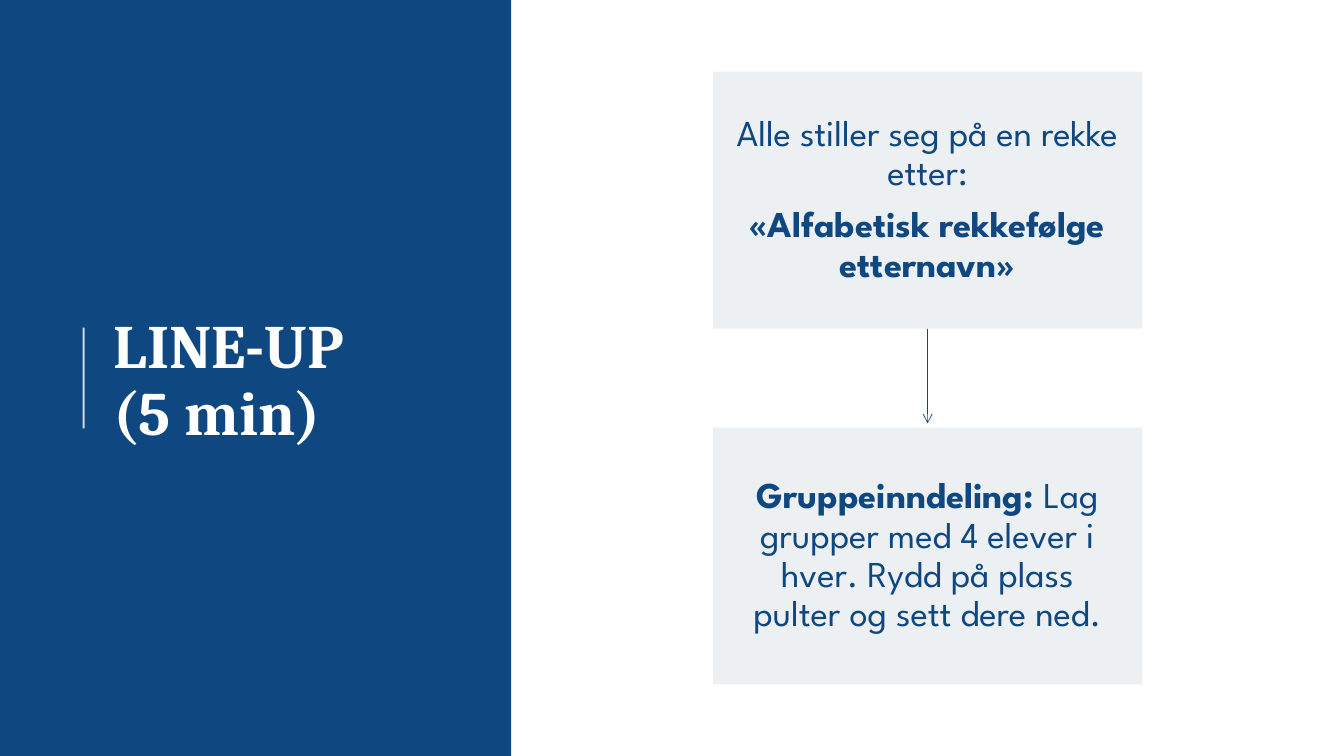
import dataclasses

import lxml.etree
import pptx
import pptx.dml.color
import pptx.enum.shapes
import pptx.enum.text
import pptx.oxml.ns
import pptx.util

Inches = pptx.util.Inches
Pt = pptx.util.Pt
qn = pptx.oxml.ns.qn


@dataclasses.dataclass(frozen=True)
class Theme:
    blue: str = "0F4881"
    white: str = "FFFFFF"
    card: str = "EDF0F3"
    title_font: str = "Cambria"
    body_font: str = "League Spartan"
    title_size: float = 44
    body_size: float = 26
    rule_width: float = 1.5
    arrow_width: float = 0.5
    line_spacing: float = 0.9
    space_after: float = 9


THEME = Theme()


def rgb(code):
    return pptx.dml.color.RGBColor.from_string(code)


def add_panel(page, left, top, width, height, color):
    panel = page.shapes.add_shape(
        pptx.enum.shapes.MSO_SHAPE.RECTANGLE,
        Inches(left), Inches(top), Inches(width), Inches(height))
    panel.shadow.inherit = False
    panel.fill.solid()
    panel.fill.fore_color.rgb = rgb(color)
    panel.line.fill.background()
    return panel


def add_line(page, start, end, color, width):
    line = page.shapes.add_connector(
        pptx.enum.shapes.MSO_CONNECTOR.STRAIGHT,
        *(Inches(value) for value in start + end))
    line.line.color.rgb = rgb(color)
    line.line.width = Pt(width)
    lxml.etree.SubElement(line._element.spPr, qn("a:effectLst"))
    return line


def set_frame(frame, side, edge):
    frame.word_wrap = True
    frame.vertical_anchor = pptx.enum.text.MSO_ANCHOR.MIDDLE
    frame.margin_left = frame.margin_right = Inches(side)
    frame.margin_top = frame.margin_bottom = Inches(edge)


def add_span(para, text, font, size, color, bold):
    span = para.add_run()
    span.text = text
    span.font.name = font
    span.font.size = Pt(size)
    span.font.color.rgb = rgb(color)
    span.font.bold = bold


def add_title_panel(page, left, top, width, height, lines):
    add_panel(page, left, top, width, height, THEME.blue)
    middle = top + height / 2
    rule_left = left + 0.83
    rule = add_line(page, (rule_left, middle + 0.5), (rule_left, middle - 0.5),
                    THEME.white, THEME.rule_width)
    color = rule._element.spPr.find(".//" + qn("a:srgbClr"))
    lxml.etree.SubElement(color, qn("a:alpha"), val="80000")

    box = page.shapes.add_textbox(
        Inches(left + 1.03), Inches(top + 0.78), Inches(3.69), Inches(6.02))
    set_frame(box.text_frame, 0.1, 0.05)
    para = box.text_frame.paragraphs[0]
    para.line_spacing = THEME.line_spacing
    for index, text in enumerate(lines):
        if index:
            para.add_line_break()
        add_span(para, text, THEME.title_font, THEME.title_size, THEME.white, True)


def add_card(page, left, top, width, height, paragraphs):
    card = add_panel(page, left, top, width, height, THEME.card)
    frame = card.text_frame
    set_frame(frame, 0.21, 0.22)
    for index, spans in enumerate(paragraphs):
        para = frame.add_paragraph() if index else frame.paragraphs[0]
        para.alignment = pptx.enum.text.PP_ALIGN.CENTER
        para.line_spacing = THEME.line_spacing
        para.space_after = Pt(THEME.space_after)
        for text, bold in spans:
            add_span(para, text, THEME.body_font, THEME.body_size, THEME.blue, bold)


def add_steps(page, left, top, width, height, steps):
    card_height = 2.55
    pitch = (height - card_height) / (len(steps) - 1)
    center = left + width / 2
    for index, paragraphs in enumerate(steps):
        card_top = top + index * pitch
        if index:
            arrow = add_line(page, (center, card_top - pitch + card_height),
                             (center, card_top - 0.04), THEME.blue, THEME.arrow_width)
            lxml.etree.SubElement(arrow.line._get_or_add_ln(), qn("a:tailEnd"), type="arrow")
        add_card(page, left, card_top, width, card_height, paragraphs)


def main():
    deck = pptx.Presentation()
    deck.slide_width = Inches(13.33)
    deck.slide_height = Inches(7.5)
    page = deck.slides.add_slide(deck.slide_layouts[6])
    add_title_panel(page, 0, 0, 5.07, 7.5, ["LINE-UP", "(5 min)"])
    steps = [
        [[("Alle stiller seg på en rekke etter:", False)],
         [("«Alfabetisk rekkefølge etternavn»", True)]],
        [[("Gruppeinndeling:", True),
          (" Lag grupper med 4 elever i hver. Rydd på plass pulter og sett dere ned.", False)]],
    ]
    add_steps(page, 7.07, 0.71, 4.26, 6.08, steps)
    deck.save("out.pptx")


if __name__ == "__main__":
    main()
